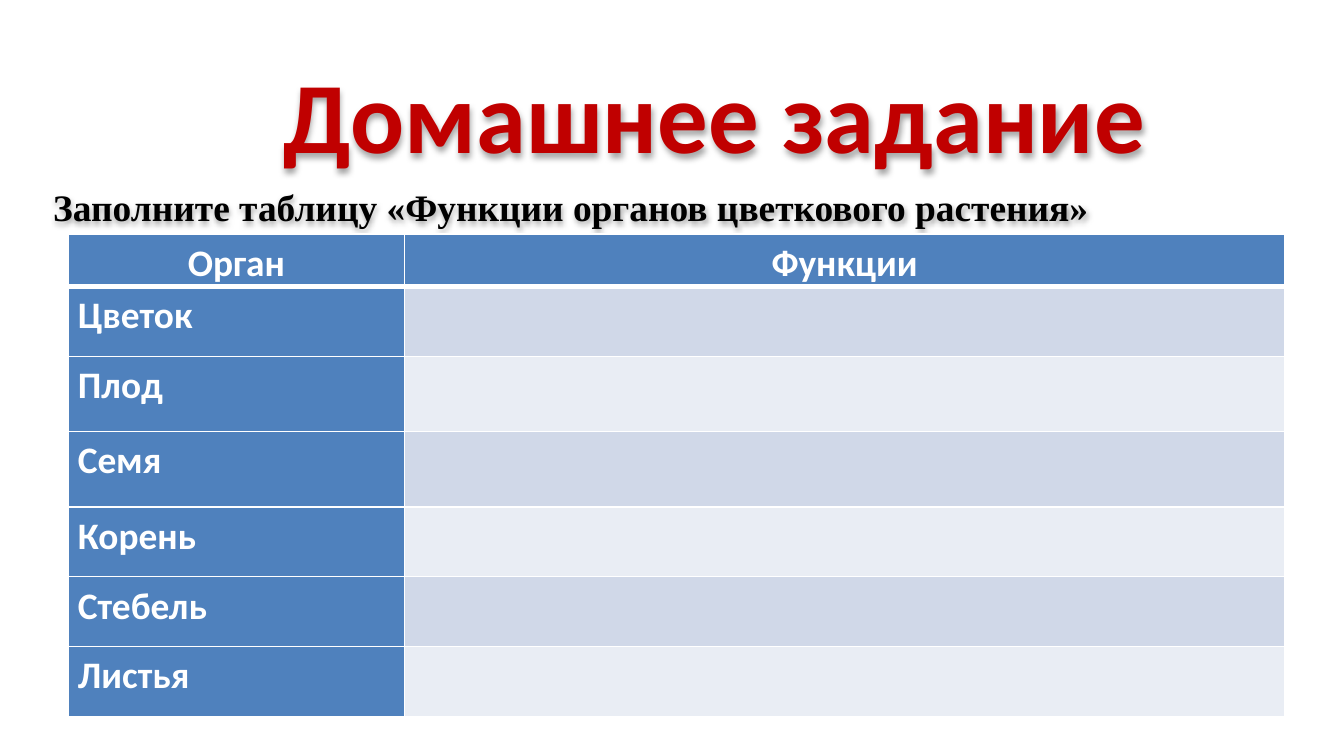
from lxml import etree
from pptx import Presentation
from pptx import util as u
from pptx.dml.color import RGBColor
from pptx.enum import shapes, text
from pptx.oxml import ns

RED = RGBColor(0xC0, 0x00, 0x00)
BLACK = RGBColor(0x00, 0x00, 0x00)
WHITE = RGBColor(0xFF, 0xFF, 0xFF)
BLUE = RGBColor(0x4F, 0x81, 0xBD)
BANDS = [RGBColor(0xD0, 0xD8, 0xE8), RGBColor(0xE9, 0xED, 0xF4)]

SHADOW = (
    f'<a:effectLst {ns.nsdecls("a")}>'
    '<a:outerShdw blurRad="40000" dist="23000" dir="5400000" rotWithShape="0">'
    '<a:srgbClr val="000000"><a:alpha val="35000"/></a:srgbClr>'
    '</a:outerShdw></a:effectLst>'
)


def add_run(para, words, font, size, color):
    span = para.add_run()
    span.text = words
    span.font.name = font
    span.font.size = u.Pt(size)
    span.font.bold = True
    span.font.color.rgb = color


def set_borders(cell, bottom_width):
    props = cell._tc.get_or_add_tcPr()
    widths = {"lnL": 1, "lnR": 1, "lnT": 1, "lnB": bottom_width}
    for place, (side, width) in enumerate(widths.items()):
        line = etree.fromstring(
            f'<a:{side} {ns.nsdecls("a")} w="{u.Pt(width)}"><a:solidFill>'
            f'<a:srgbClr val="{WHITE}"/></a:solidFill></a:{side}>'
        )
        props.insert(place, line)


# Widescreen page, 16 by 9
deck = Presentation()
deck.slide_width = u.Inches(10)
deck.slide_height = u.Inches(10 * 9 / 16)
page = deck.slides.add_slide(deck.slide_layouts[6])

# Title and task line, both with shadowed text
headings = [
    ("Домашнее задание", (1.93, 0.45, 6.77, 0.79), "Calibri", 54, RED),
    ("Заполните таблицу «Функции органов цветкового растения»",
     (-0.12, 1.32, 9.61, 0.77), "Times New Roman", 20, BLACK),
]
boxes = []
for words, place, font, size, color in headings:
    box = page.shapes.add_shape(
        shapes.MSO_SHAPE.ROUNDED_RECTANGLE, *[u.Inches(n) for n in place])
    box.fill.background()
    box.line.fill.background()
    box._element.spPr.append(etree.fromstring(SHADOW))
    frame = box.text_frame
    frame.word_wrap = True
    frame.vertical_anchor = text.MSO_ANCHOR.MIDDLE
    para = frame.paragraphs[0]
    para.alignment = text.PP_ALIGN.CENTER
    add_run(para, words, font, size, color)
    boxes.append(box)

# The task line is indented and sits in the upper part of its box
task_frame = boxes[1].text_frame
task_frame.margin_bottom = u.Inches(0.44)
task = task_frame.paragraphs[0]
task.alignment = text.PP_ALIGN.JUSTIFY
task.line_spacing = 1.15
task._p.get_or_add_pPr().set("marL", str(u.Inches(0.38)))

# Table of plant organs
rows = ["Орган", "Цветок", "Плод", "Семя", "Корень", "Стебель", "Листья"]
heights = [0.36, 0.52, 0.56, 0.56, 0.52, 0.52, 0.52]
table = page.shapes.add_table(
    len(rows), 2, u.Inches(0.51), u.Inches(1.74),
    u.Inches(9.06), u.Inches(sum(heights))).table
for column, width in zip(table.columns, [2.5, 6.55]):
    column.width = u.Inches(width)

for index, (organ, height) in enumerate(zip(rows, heights)):
    is_header = index == 0
    table.rows[index].height = u.Inches(height)
    for col, words in enumerate([organ, "Функции" if is_header else ""]):
        cell = table.cell(index, col)
        cell.fill.solid()
        cell.fill.fore_color.rgb = BLUE if words else BANDS[(index - 1) % 2]
        set_borders(cell, 3 if is_header else 1)
        if words:
            cell.margin_left = cell.margin_right = u.Inches(0.07)
            cell.margin_top = cell.margin_bottom = 0
            para = cell.text_frame.paragraphs[0]
            para.alignment = text.PP_ALIGN.CENTER if is_header else text.PP_ALIGN.JUSTIFY
            para.line_spacing = 1.15
            add_run(para, words, "Calibri", 20, WHITE)

deck.save("out.pptx")
